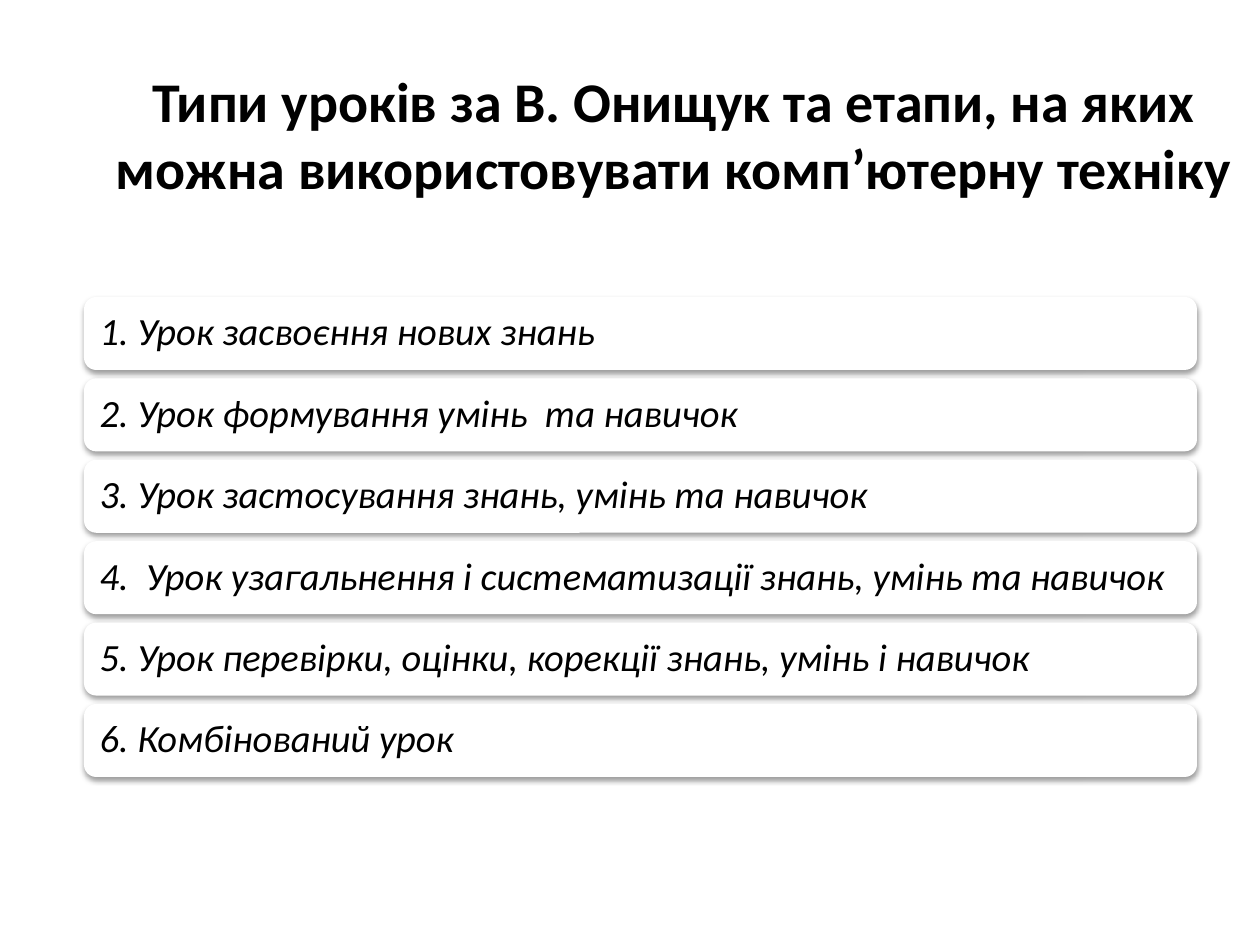
from dataclasses import dataclass

from lxml import etree
from pptx import Presentation
from pptx.dml.color import RGBColor
from pptx.enum.shapes import MSO_SHAPE
from pptx.enum.text import MSO_ANCHOR, MSO_AUTO_SIZE, PP_ALIGN
from pptx.oxml.ns import qn
from pptx.util import Emu, Pt

ROUNDED = MSO_SHAPE.ROUNDED_RECTANGLE
MIDDLE = MSO_ANCHOR.MIDDLE
NO_AUTOFIT = MSO_AUTO_SIZE.NONE
LEFT = PP_ALIGN.LEFT
CENTER = PP_ALIGN.CENTER

PIXELS_PER_INCH = 126
SLIDE_SIZE = (1260, 945)
TITLE_BOX = (88, 55, 1172, 158)
LESSONS_BOX = (84, 297, 1113, 480)
CARD_HEIGHT = 73
CARD_MARGIN = 12

TITLE = "Типи уроків за В. Онищук та етапи, на яких можна використовувати комп’ютерну техніку"
LESSON_TYPES = [
    "1. Урок засвоєння нових знань",
    "2. Урок формування умінь  та навичок",
    "3. Урок застосування знань, умінь та навичок",
    "4.  Урок узагальнення і систематизації знань, умінь та навичок",
    "5. Урок перевірки, оцінки, корекції знань, умінь і навичок",
    "6. Комбінований урок",
]


@dataclass(frozen=True)
class Theme:
    font: str = "Calibri"
    text: RGBColor = RGBColor(0, 0, 0)
    surface: RGBColor = RGBColor(255, 255, 255)
    shadow: str = "000000"
    title_size: int = 32
    card_size: int = 22


THEME = Theme()


def px(value):
    return Emu(round(value * 914400 / PIXELS_PER_INCH))


def style_text(text_frame, size, alignment, bold=False, italic=False):
    text_frame.word_wrap = True
    text_frame.auto_size = NO_AUTOFIT
    text_frame.vertical_anchor = MIDDLE
    for paragraph in text_frame.paragraphs:
        paragraph.alignment = alignment
        for run in paragraph.runs:
            font = run.font
            font.name = THEME.font
            font.size = Pt(size)
            font.bold = bold
            font.italic = italic
            font.color.rgb = THEME.text


def add_soft_shadow(shape):
    shape.shadow.inherit = False
    effects = shape._element.spPr.find(qn("a:effectLst"))
    shadow = etree.SubElement(
        effects, qn("a:outerShdw"),
        blurRad=str(Pt(3.1)), dist=str(Pt(1.6)), dir="5400000", rotWithShape="0",
    )
    color = etree.SubElement(shadow, qn("a:srgbClr"), val=THEME.shadow)
    etree.SubElement(color, qn("a:alpha"), val="38000")


def place_title(slide, box):
    title = slide.shapes.title
    title.left, title.top, title.width, title.height = map(px, box)
    title.text_frame.text = TITLE
    style_text(title.text_frame, THEME.title_size, CENTER, bold=True)


def add_card(slide, box, text):
    card = slide.shapes.add_shape(ROUNDED, *map(px, box))
    card.fill.solid()
    card.fill.fore_color.rgb = THEME.surface
    card.line.fill.background()
    add_soft_shadow(card)
    text_frame = card.text_frame
    text_frame.margin_left = text_frame.margin_right = px(CARD_MARGIN)
    text_frame.margin_top = text_frame.margin_bottom = px(CARD_MARGIN)
    text_frame.text = text
    text_frame.paragraphs[0].line_spacing = 0.9
    style_text(text_frame, THEME.card_size, LEFT, italic=True)


def add_lesson_list(slide, box):
    left, top, width, height = box
    pitch = (height - CARD_HEIGHT) / (len(LESSON_TYPES) - 1)
    for index, text in enumerate(LESSON_TYPES):
        add_card(slide, (left, top + index * pitch, width, CARD_HEIGHT), text)


def main():
    presentation = Presentation()
    presentation.slide_width, presentation.slide_height = map(px, SLIDE_SIZE)
    slide = presentation.slides.add_slide(presentation.slide_layouts[5])
    slide.background.fill.solid()
    slide.background.fill.fore_color.rgb = THEME.surface
    place_title(slide, TITLE_BOX)
    add_lesson_list(slide, LESSONS_BOX)
    presentation.save("out.pptx")


if __name__ == "__main__":
    main()
